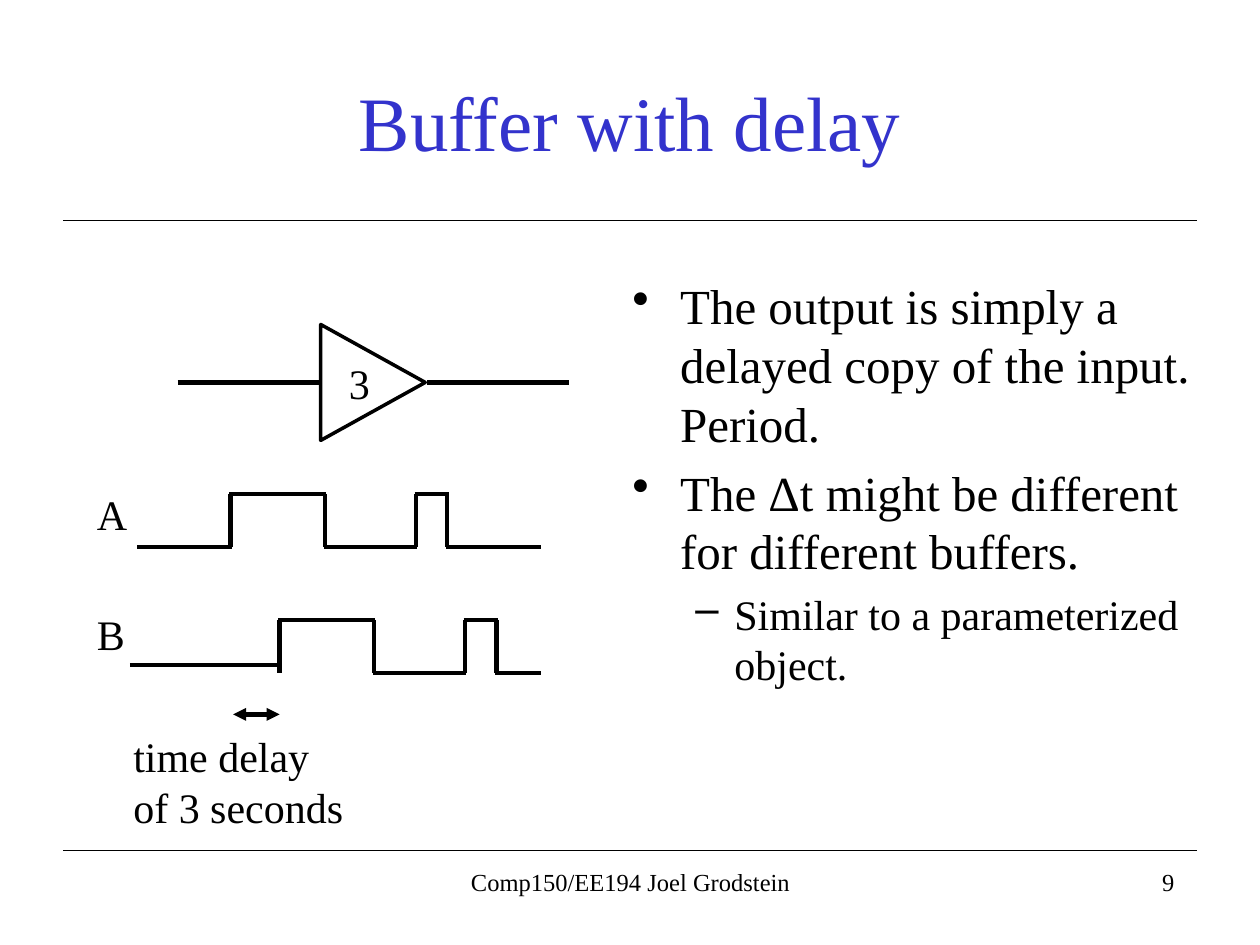
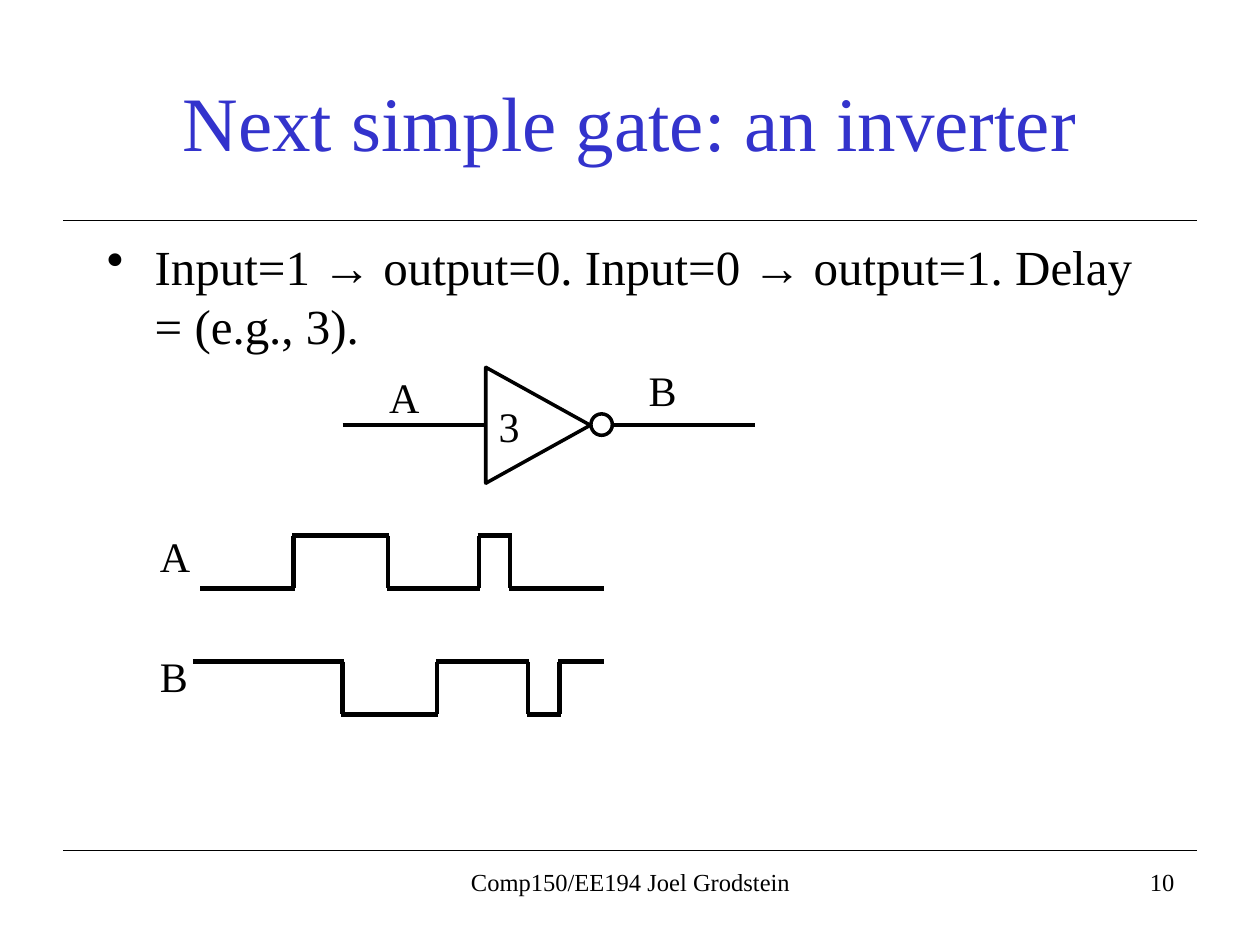
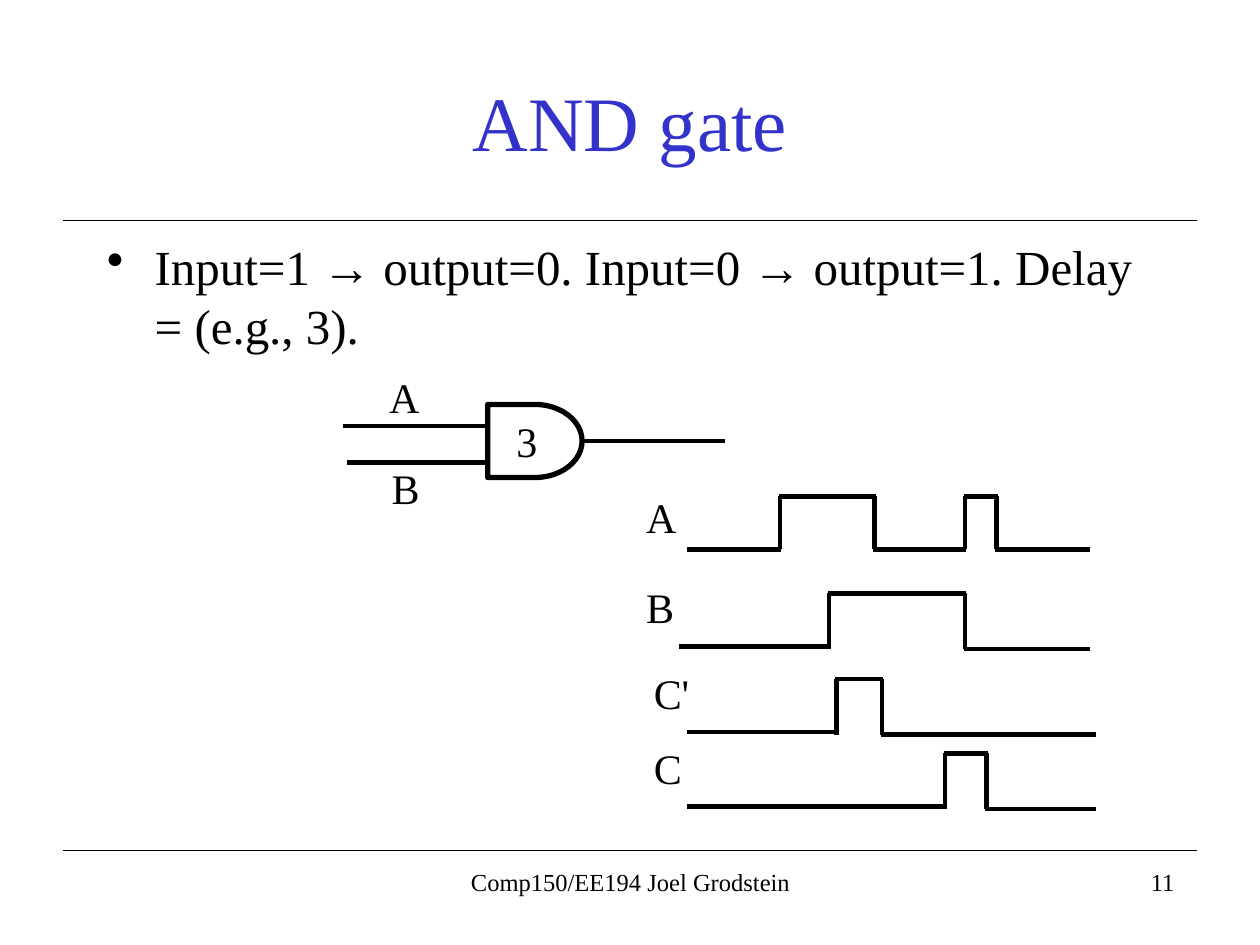
from dataclasses import dataclass
from itertools import pairwise

from lxml.etree import SubElement
from pptx import Presentation
from pptx.dml.color import RGBColor
from pptx.enum.shapes import MSO_CONNECTOR, MSO_SHAPE
from pptx.enum.text import MSO_ANCHOR, PP_ALIGN
from pptx.oxml.ns import qn
from pptx.util import Inches, Pt


@dataclass(frozen=True)
class Theme:
    font: str = "Times New Roman"
    ink: RGBColor = RGBColor(0x00, 0x00, 0x00)
    title_ink: RGBColor = RGBColor(0x33, 0x33, 0xCC)
    title_size: int = 44
    body_sizes: tuple = (28, 24)
    label_size: int = 24
    footer_size: int = 14
    rule_width: float = 0.75
    wire_width: float = 2.5
    outline_width: float = 2


@dataclass(frozen=True)
class Box:
    left: float
    top: float
    width: float
    height: float

    def lengths(self):
        return [Inches(value) for value in (self.left, self.top, self.width, self.height)]


@dataclass(frozen=True)
class Wave:
    label: str
    box: Box
    edges: tuple
    starts_high: bool = False
    first_lift: float = 0
    label_shift: tuple = (-0.37, -0.14)


THEME = Theme()
FOOTER = "Comp150/EE194 Joel Grodstein"
BULLETS = (("•", 0.38, 0.38), ("–", 0.81, 0.31))
GATE_RULE = "Input=1 → output=0. Input=0 → output=1. Delay = (e.g., 3)."
WIDE_BODY = Box(0.75, 1.83, 8.5, 1.23)
WIRE_LENGTH = 1.13
A_EDGES = (0, 0.73, 1.48, 2.2, 2.45, 3.18)
DELAYED_EDGES = (0, 1.18, 1.93, 2.65, 2.9, 3.24)
A_LABEL_SHIFT = (-0.43, -0.09)


def style_font(para, size, color=THEME.ink):
    para.font.name = THEME.font
    para.font.size = Pt(size)
    para.font.color.rgb = color


def add_text(slide, box, text, size=THEME.label_size, color=THEME.ink,
             align=PP_ALIGN.LEFT, anchor=MSO_ANCHOR.TOP):
    frame = slide.shapes.add_textbox(*box.lengths()).text_frame
    frame.word_wrap = True
    frame.vertical_anchor = anchor
    para = frame.paragraphs[0]
    para.text = text
    para.alignment = align
    style_font(para, size, color)


def add_label(slide, left, top, text):
    add_text(slide, Box(left, top, 0.75, 0.5), text)


def add_body(slide, box, items):
    frame = slide.shapes.add_textbox(*box.lengths()).text_frame
    frame.word_wrap = True
    for index, (level, text) in enumerate(items):
        para = frame.add_paragraph() if index else frame.paragraphs[0]
        para.text = text
        para.level = level
        size = THEME.body_sizes[level]
        para.space_before = Pt(0.2 * size)
        symbol, margin, hanging = BULLETS[level]
        properties = para._p.get_or_add_pPr()
        properties.set("marL", str(Inches(margin)))
        properties.set("indent", str(-Inches(hanging)))
        SubElement(properties, qn("a:buChar")).set("char", symbol)
        style_font(para, size)


def add_line(slide, start, end, width=THEME.wire_width):
    points = [Inches(value) for value in (*start, *end)]
    line = slide.shapes.add_connector(MSO_CONNECTOR.STRAIGHT, *points)
    line.line.color.rgb = THEME.ink
    line.line.width = Pt(width)
    SubElement(line._element.spPr, qn("a:effectLst"))
    return line


def add_double_arrow(slide, start, end):
    outline = add_line(slide, start, end).line._get_or_add_ln()
    for name in ("a:headEnd", "a:tailEnd"):
        SubElement(outline, qn(name)).set("type", "triangle")


def add_outline(slide, kind, box, width=THEME.outline_width):
    shape = slide.shapes.add_shape(kind, *box.lengths())
    shape.shadow.inherit = False
    shape.fill.background()
    shape.line.color.rgb = THEME.ink
    shape.line.width = Pt(width)
    return shape


def add_frame(deck, title, number):
    slide = deck.slides.add_slide(deck.slide_layouts[6])
    for height in (1.75, 6.75):
        add_line(slide, (0.5, height), (9.5, height), THEME.rule_width)
    add_text(slide, Box(0.75, 0.33, 8.5, 1.25), title, THEME.title_size,
             THEME.title_ink, PP_ALIGN.CENTER, MSO_ANCHOR.MIDDLE)
    add_text(slide, Box(3.42, 6.83, 3.17, 0.5), FOOTER, THEME.footer_size,
             align=PP_ALIGN.CENTER)
    add_text(slide, Box(6.25, 6.83, 3.17, 0.5), str(number), THEME.footer_size,
             align=PP_ALIGN.RIGHT)
    return slide


def add_wave(slide, wave):
    box = wave.box
    bottom = box.top + box.height
    high = wave.starts_high
    for index, (start, end) in enumerate(pairwise(wave.edges)):
        level = box.top if high else bottom
        if index == 0:
            level -= wave.first_lift
        else:
            edge = box.left + start
            add_line(slide, (edge, box.top), (edge, bottom))
        add_line(slide, (box.left + start - 0.01, level), (box.left + end + 0.01, level))
        high = not high
    shift_x, shift_y = wave.label_shift
    add_label(slide, box.left + shift_x, box.top + shift_y, wave.label)


def add_input_wave(slide, left, top):
    add_wave(slide, Wave("A", Box(left, top, 3.18, 0.42), A_EDGES,
                         label_shift=A_LABEL_SHIFT))


def add_triangle_gate(slide, box, delay_left, inverted=False):
    triangle = add_outline(slide, MSO_SHAPE.ISOSCELES_TRIANGLE, box)
    triangle.rotation = 90
    middle = box.top + box.height / 2
    input_end = box.left + 0.04
    output_start = box.left + 0.89
    if inverted:
        bubble = Box(output_start - 0.01, middle - 0.09, 0.17, 0.17)
        add_outline(slide, MSO_SHAPE.OVAL, bubble)
        output_start = bubble.left + bubble.width
    add_line(slide, (input_end - WIRE_LENGTH, middle), (input_end, middle))
    add_line(slide, (output_start, middle), (output_start + WIRE_LENGTH, middle))
    add_label(slide, box.left + delay_left, box.top + 0.17, "3")


def add_and_gate(slide, box):
    gate = add_outline(slide, MSO_SHAPE.FLOWCHART_DELAY, box, 3)
    for wire_left, drop in ((box.left - 1.15, 0.17), (box.left - 1.12, 0.46)):
        height = box.top + drop
        add_line(slide, (wire_left, height), (wire_left + WIRE_LENGTH, height))
    right, middle = box.left + box.width, box.top + box.height / 2
    output = add_line(slide, (right, middle), (right + WIRE_LENGTH, middle))
    output.begin_connect(gate, 3)
    add_label(slide, box.left - 0.88, box.top - 0.31, "A")
    add_label(slide, box.left - 0.86, box.top + 0.41, "B")
    add_label(slide, box.left + 0.13, box.top + 0.04, "3")


def build_buffer(deck):
    slide = add_frame(deck, "Buffer with delay", 9)
    add_body(slide, Box(4.92, 2.14, 4.75, 3.86), (
        (0, "The output is simply a delayed copy of the input. Period."),
        (0, "The Δt might be different for different buffers."),
        (1, "Similar to a parameterized object."),
    ))
    add_triangle_gate(slide, Box(2.5, 2.62, 0.92, 0.83), 0.17)
    add_input_wave(slide, 1.1, 3.92)
    add_wave(slide, Wave("B", Box(1.04, 4.92, 3.24, 0.42), DELAYED_EDGES, first_lift=0.06))
    add_double_arrow(slide, (1.85, 5.67), (2.22, 5.67))
    add_text(slide, Box(0.96, 5.75, 1.9, 0.91), "time delay of 3 seconds")


def build_inverter(deck):
    slide = add_frame(deck, "Next simple gate: an inverter", 10)
    add_body(slide, WIDE_BODY, ((0, GATE_RULE),))
    add_triangle_gate(slide, Box(3.81, 2.96, 0.92, 0.83), 0.05, inverted=True)
    add_label(slide, 2.99, 2.9, "A")
    add_label(slide, 5.05, 2.84, "B")
    add_input_wave(slide, 1.6, 4.25)
    add_wave(slide, Wave("B", Box(1.54, 5.25, 3.24, 0.42), DELAYED_EDGES, starts_high=True))


def build_and_gate(deck):
    slide = add_frame(deck, "AND gate", 11)
    add_body(slide, WIDE_BODY, ((0, GATE_RULE),))
    add_and_gate(slide, Box(3.87, 3.21, 0.75, 0.58))
    add_input_wave(slide, 5.46, 3.94)
    for label, left, top, edges in (
        ("B", 5.4, 4.71, (0, 1.18, 2.26, 3.24)),
        ("C'", 5.46, 5.39, (0, 1.18, 1.54, 3.23)),
        ("C", 5.46, 5.98, (0, 2.04, 2.37, 3.23)),
    ):
        add_wave(slide, Wave(label, Box(left, top, edges[-1], 0.44), edges, first_lift=0.02))


def main():
    deck = Presentation()
    deck.slide_width, deck.slide_height = Inches(10), Inches(7.5)
    build_buffer(deck)
    build_inverter(deck)
    build_and_gate(deck)
    deck.save("out.pptx")


if __name__ == "__main__":
    main()
